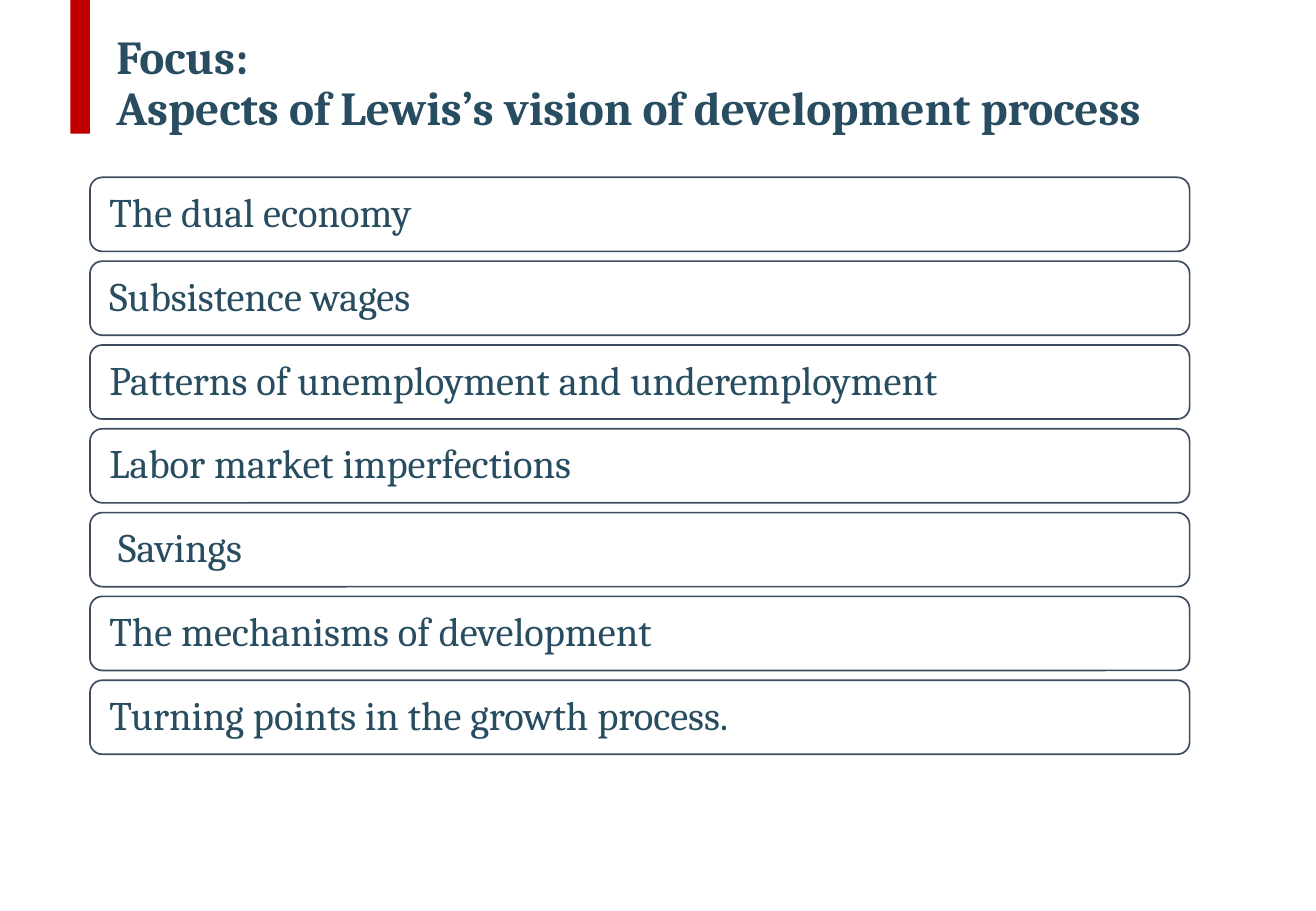
from pptx import Presentation
from pptx.dml.color import RGBColor
from pptx.enum.shapes import MSO_SHAPE
from pptx.enum.text import MSO_ANCHOR, PP_ALIGN
from pptx.util import Inches, Pt


def color(code):
    return RGBColor.from_string(code)


class Deck:
    ink = "284D60"
    edge = "3E4C60"
    red = "C00000"
    white = "FFFFFF"
    face = "Cambria"

    def __init__(self, wide, high):
        self.file = Presentation()
        self.file.slide_width = Inches(wide)
        self.file.slide_height = Inches(high)
        self.slide = self.file.slides.add_slide(self.file.slide_layouts[6])

    def apply(self, item, values):
        for name, value in values.items():
            setattr(item, name, value)

    def label(self, shape, text, size, inset, bold=False):
        frame = shape.text_frame
        self.apply(frame, {
            "word_wrap": True,
            "vertical_anchor": MSO_ANCHOR.MIDDLE,
            "margin_left": Inches(inset),
            "margin_right": Inches(inset),
            "margin_top": Inches(0.05),
            "margin_bottom": Inches(0.05),
        })
        para = frame.paragraphs[0]
        para.text = text
        self.apply(para, {"alignment": PP_ALIGN.LEFT, "line_spacing": 0.9})
        for run in para.runs:
            self.apply(run.font, {"name": self.face, "size": Pt(size), "bold": bold})
            run.font.color.rgb = color(self.ink)

    def title(self, text, box):
        shape = self.slide.shapes.add_textbox(*map(Inches, box))
        self.label(shape, text, 28, 0.1, True)

    def block(self, kind, box, fill, line=None):
        shape = self.slide.shapes.add_shape(kind, *map(Inches, box))
        shape.shadow.inherit = False
        shape.fill.solid()
        shape.fill.fore_color.rgb = color(fill)
        if line:
            shape.line.color.rgb = color(line)
            shape.line.width = Pt(1)
        else:
            shape.line.fill.background()
        return shape

    def topic(self, text, box):
        shape = self.block(MSO_SHAPE.ROUNDED_RECTANGLE, box, self.white, self.edge)
        self.label(shape, text, 24, 0.13)


def main():
    deck = Deck(10.83, 7.5)
    deck.title("Focus: \vAspects of Lewis’s vision of development process",
               (0.86, 0.16, 9.34, 1.08))
    deck.block(MSO_SHAPE.RECTANGLE, (0.58, 0, 0.16, 1.1), deck.red)
    topics = [
        "The dual economy",
        "Subsistence wages",
        "Patterns of unemployment and underemployment",
        "Labor market imperfections",
        " Savings",
        "The mechanisms of development",
        "Turning points in the growth process.",
    ]
    top, step = 1.46, 0.69
    for row, text in enumerate(topics):
        deck.topic(text, (0.74, top + row * step, 9.05, 0.61))
    deck.file.save("out.pptx")


if __name__ == "__main__":
    main()
